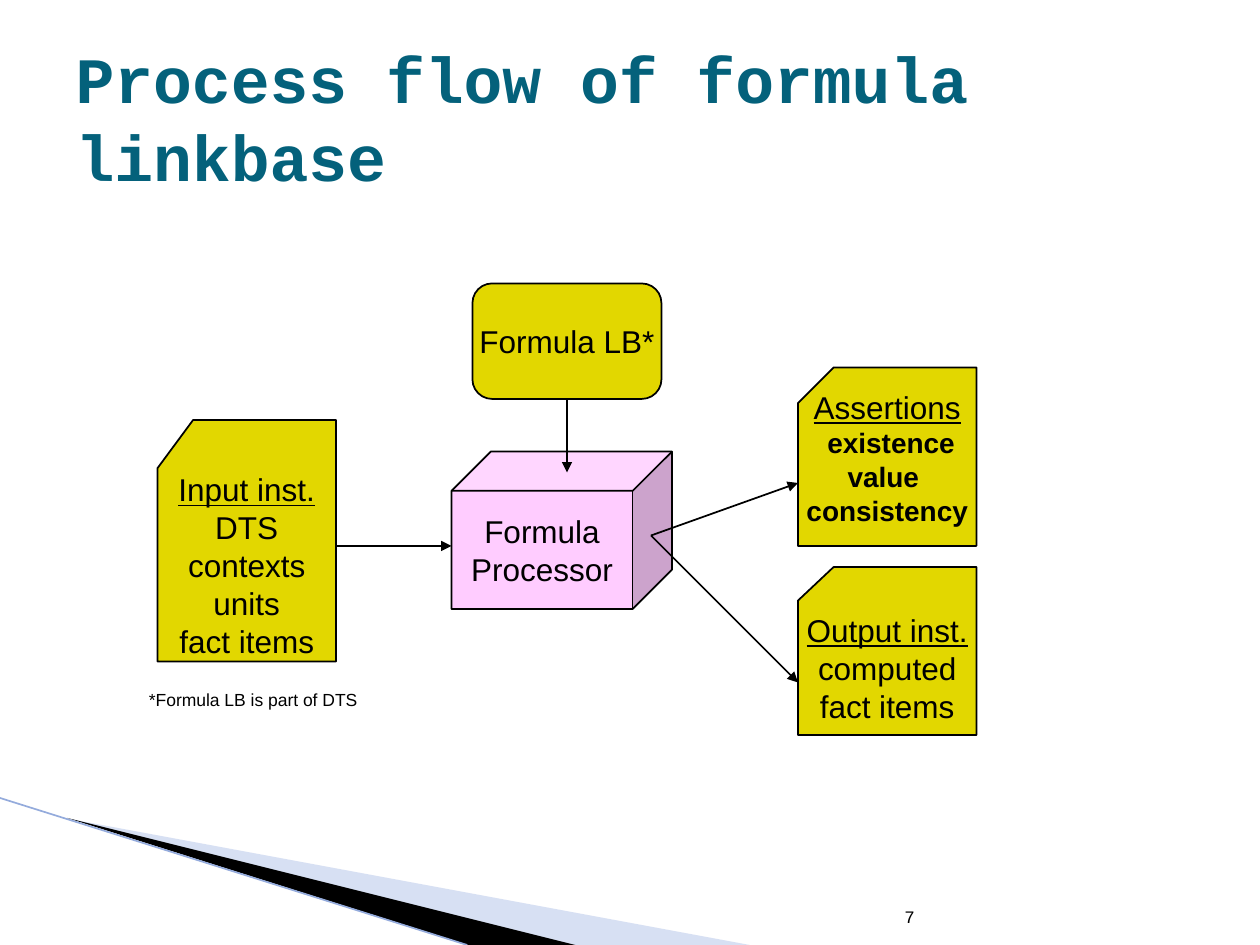
from lxml import etree
from pptx import Presentation
from pptx.dml.color import RGBColor
from pptx.enum.shapes import MSO_CONNECTOR, MSO_SHAPE
from pptx.enum.text import MSO_ANCHOR, PP_ALIGN
from pptx.oxml.ns import qn
from pptx.util import Inches, Pt

CARD = MSO_SHAPE.FLOWCHART_CARD
ROUNDED = MSO_SHAPE.ROUNDED_RECTANGLE
CUBE = MSO_SHAPE.CUBE
STRAIGHT = MSO_CONNECTOR.STRAIGHT
MIDDLE, BOTTOM = MSO_ANCHOR.MIDDLE, MSO_ANCHOR.BOTTOM
LEFT, CENTER, RIGHT = PP_ALIGN.LEFT, PP_ALIGN.CENTER, PP_ALIGN.RIGHT

BLACK = RGBColor(0x00, 0x00, 0x00)
TEAL = RGBColor(0x04, 0x61, 0x7B)
YELLOW = RGBColor(0xE2, 0xD7, 0x00)
PINK = RGBColor(0xFF, 0xCC, 0xFF)
PALE_BLUE = RGBColor(0x9D, 0xB2, 0xE1)
EDGE_BLUE = RGBColor(0x94, 0xAB, 0xDC)

SLIDE_WIDTH, SLIDE_HEIGHT = Inches(10), Inches(7.5)
COLUMNS, ROWS = 120, 90


def grid(*cells):
    """Turn alternating column and row counts into lengths."""
    units = (SLIDE_WIDTH / COLUMNS, SLIDE_HEIGHT / ROWS)
    return [round(cell * units[index % 2]) for index, cell in enumerate(cells)]


def style_font(font, size, color=BLACK, name="Arial", bold=None):
    """Set the face, size and colour of a font."""
    font.name, font.size, font.bold = name, Pt(size), bold
    font.color.rgb = color


def add_line(slide, start, end, color=BLACK, width=1, arrow=True):
    """Draw a straight line between two grid points."""
    connector = slide.shapes.add_connector(STRAIGHT, *grid(*start, *end))
    connector.line.color.rgb = color
    connector.line.width = Pt(width)
    if arrow:
        line_properties = connector._element.spPr.find(qn("a:ln"))
        etree.SubElement(line_properties, qn("a:tailEnd"), type="triangle")
    etree.SubElement(connector._element.spPr, qn("a:effectLst"))


def add_wedge(slide, points, color, opacity=100):
    """Fill a borderless polygon through grid points."""
    corners = [grid(*point) for point in points]
    builder = slide.shapes.build_freeform(*corners[0])
    builder.add_line_segments(corners[1:])
    wedge = builder.convert_to_shape()
    wedge.shadow.inherit = False
    wedge.fill.solid()
    wedge.fill.fore_color.rgb = color
    wedge.line.fill.background()
    if opacity < 100:
        fill_color = wedge._element.spPr.find(qn("a:solidFill"))[0]
        etree.SubElement(fill_color, qn("a:alpha"), val=str(opacity * 1000))


def add_node(slide, box, kind, color, paragraphs, heading=False):
    """Add an outlined node with centred text and return it."""
    node = slide.shapes.add_shape(kind, *grid(*box))
    node.shadow.inherit = False
    node.fill.solid()
    node.fill.fore_color.rgb = color
    node.line.color.rgb = BLACK
    node.line.width = Pt(1)
    frame = node.text_frame
    frame.word_wrap = False
    frame.vertical_anchor = MIDDLE
    for index, text in enumerate(paragraphs):
        paragraph = frame.add_paragraph() if index else frame.paragraphs[0]
        paragraph.text = text
        paragraph.alignment = CENTER
        style_font(paragraph.font, 18)
        for run in paragraph.runs:
            style_font(run.font, 18)
    if heading:
        frame.paragraphs[0].runs[0].font.underline = True
    return node


def add_assertions(slide, box):
    """Add the assertions card with its bold list of kinds."""
    kinds = ["Assertions\v existence", "value ", "consistency"]
    frame = add_node(slide, box, CARD, YELLOW, kinds, heading=True).text_frame
    frame.margin_bottom = Inches(0.32)
    runs = [run for paragraph in frame.paragraphs for run in paragraph.runs]
    for run in runs[1:]:
        style_font(run.font, 16, bold=True)


def add_label(slide, box, text, alignment, font_name="Arial", wrap=False):
    """Add a small line of text."""
    frame = slide.shapes.add_textbox(*grid(*box)).text_frame
    frame.word_wrap = wrap
    frame.vertical_anchor = BOTTOM
    paragraph = frame.paragraphs[0]
    paragraph.text = text
    paragraph.alignment = alignment
    style_font(paragraph.font, 10, name=font_name)


def add_decoration(slide):
    """Draw the swoosh in the lower left corner."""
    add_wedge(slide, [(6.6, 78), (71.4, ROWS), (54.7, ROWS)], PALE_BLUE, 40)
    add_wedge(slide, [(6.4, 77.9), (54.8, ROWS), (44.6, ROWS)], BLACK)
    add_line(slide, (0, 76), (44.5, ROWS), EDGE_BLUE, 0.95, arrow=False)


def add_title(slide, box):
    """Place and format the title placeholder."""
    title = slide.shapes.title
    title.left, title.top, title.width, title.height = grid(*box)
    title.text_frame.vertical_anchor = MIDDLE
    paragraph = title.text_frame.paragraphs[0]
    paragraph.text = "Process flow of formula linkbase"
    paragraph.alignment = LEFT
    style_font(paragraph.font, 37, TEAL, "Courier New", True)


def add_flow(slide):
    """Draw the nodes of the process and the arrows between them."""
    add_node(slide, (15, 40, 17, 23), CARD, YELLOW,
             ["Input inst.\vDTS", "contexts\vunits\vfact items"], heading=True)
    formula = add_node(slide, (45, 27, 18, 11), ROUNDED, YELLOW, ["Formula LB*"])
    formula.adjustments[0] = 0.17
    add_node(slide, (43, 43, 21, 15), CUBE, PINK, ["Formula\vProcessor"])
    add_node(slide, (76, 54, 17, 16), CARD, YELLOW,
             ["Output inst.\vcomputed\vfact items"], heading=True)
    add_assertions(slide, (76, 35, 17, 17))
    processor_exit = (62, 51)
    for start, end in [((32, 52), (43, 52)), ((54, 38), (54, 45)),
                       (processor_exit, (76, 46)), (processor_exit, (76, 65))]:
        add_line(slide, start, end)


def main():
    """Build the slide and save it."""
    presentation = Presentation()
    presentation.slide_width, presentation.slide_height = SLIDE_WIDTH, SLIDE_HEIGHT
    slide = presentation.slides.add_slide(presentation.slide_layouts[5])
    add_decoration(slide)
    add_title(slide, (6, 3.6, 108, 15))
    add_flow(slide)
    add_label(slide, (13, 65, 22.2, 3.2), "*Formula LB is part of DTS", LEFT)
    add_label(slide, (57.5, 84.1, 30.8, 4.8), "7", RIGHT, "Courier New", wrap=True)
    presentation.save("out.pptx")


if __name__ == "__main__":
    main()
